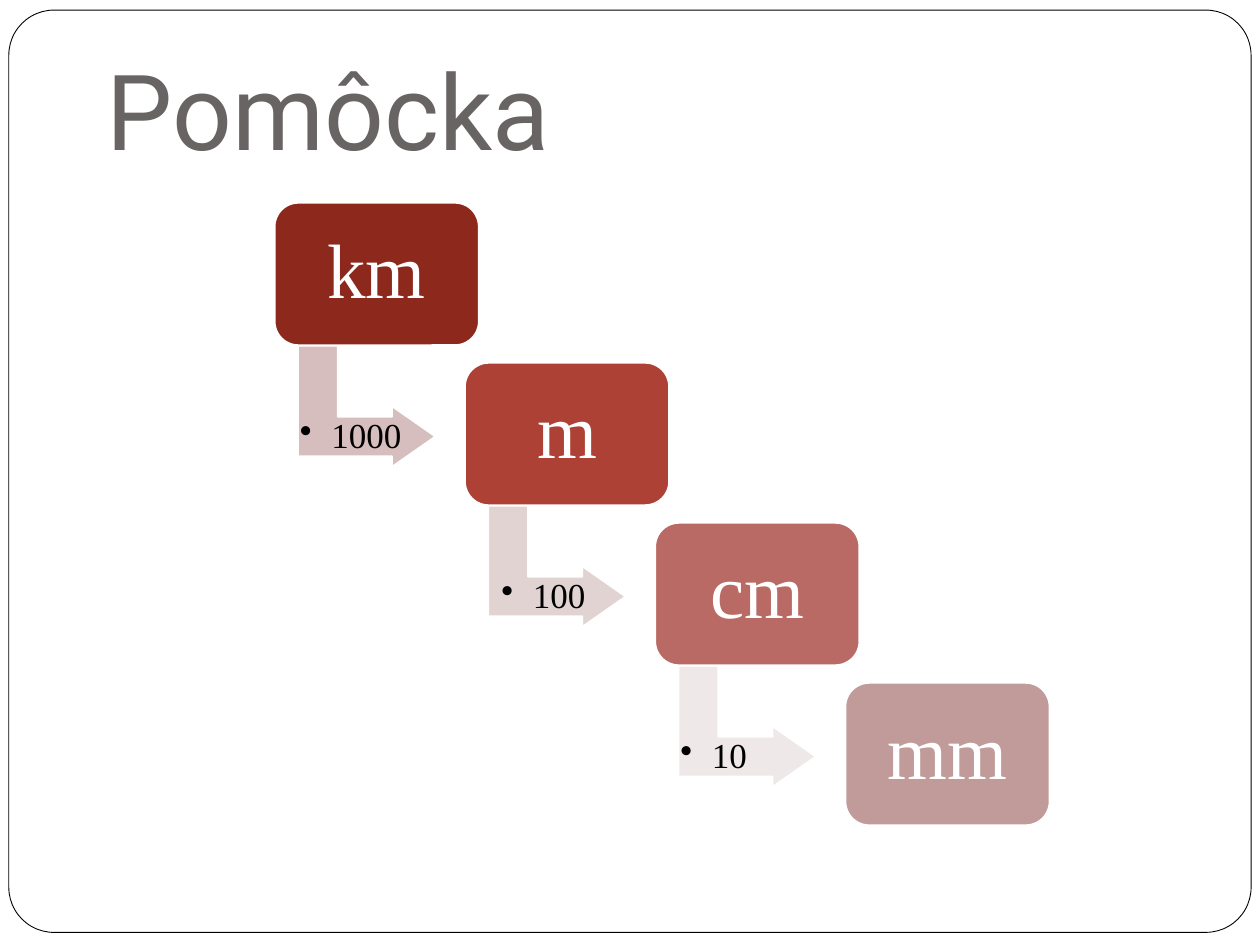
from dataclasses import dataclass

from lxml import etree
from pptx import Presentation
from pptx.dml.color import RGBColor
from pptx.enum import shapes, text
from pptx.oxml.ns import qn
from pptx.util import Inches, Pt


@dataclass(frozen=True)
class Theme:
    paper: str = "FFFFFF"
    ink: str = "000000"
    title: str = "696464"
    title_font: str = "Roboto"
    body_font: str = "Times New Roman"
    title_size: int = 60
    unit_size: int = 44
    factor_size: int = 20


@dataclass(frozen=True)
class Factor:
    """Conversion from one unit to the next, shown on a bent arrow."""
    label: str
    color: str
    indent: float
    width: float


@dataclass(frozen=True)
class Unit:
    name: str
    color: str
    factor: Factor | None = None


THEME = Theme()
UNITS = [
    Unit("km", "8D291C", Factor("1000", "D5BEBD", 0.12, 1.88)),
    Unit("m", "AD4136", Factor("100", "E2D3D3", 0.21, 1.18)),
    Unit("cm", "BA6A65", Factor("10", "EFE8E8", 0.12, 1.18)),
    Unit("mm", "C09B99"),
]
LEFT, TOP = 2.18, 1.61
STEP_X, STEP_Y = 1.51, 1.27
BOX_W, BOX_H = 1.62, 1.13


def add_shape(slide, kind, box, fill: str, line: str, width: float, adjust):
    sp = slide.shapes.add_shape(kind, *map(Inches, box))
    sp.shadow.inherit = False
    sp.fill.solid()
    sp.fill.fore_color.rgb = RGBColor.from_string(fill)
    sp.line.color.rgb = RGBColor.from_string(line)
    sp.line.width = Pt(width)
    for i, value in enumerate(adjust):
        sp.adjustments[i] = value
    return sp


def write(sp, content: str, *, size: int, color: str, font: str, insets,
          anchor=text.MSO_ANCHOR.MIDDLE, align=text.PP_ALIGN.LEFT,
          spacing: float = 0.9, bullet: bool = False) -> None:
    """Insets run left, top, right, bottom."""
    tf = sp.text_frame
    tf.word_wrap = True
    tf.vertical_anchor = anchor
    (tf.margin_left, tf.margin_top,
     tf.margin_right, tf.margin_bottom) = map(Inches, insets)
    p = tf.paragraphs[0]
    p.alignment = align
    p.line_spacing = spacing
    r = p.add_run()
    r.text = content
    r.font.size = Pt(size)
    r.font.name = font
    r.font.color.rgb = RGBColor.from_string(color)
    if bullet:
        pPr = p._p.get_or_add_pPr()
        pPr.set("marL", str(Inches(0.25)))
        pPr.set("indent", str(-Inches(0.25)))
        etree.SubElement(pPr, qn("a:buChar")).set("char", "•")


def add_factor(slide, factor: Factor, x: float, y: float) -> None:
    arrow = add_shape(slide, shapes.MSO_SHAPE.BENT_UP_ARROW,
                      (x + 0.25, y + 1.07, 0.96, 1.09),
                      factor.color, THEME.paper, 1, (0.328, 0.25, 0.358))
    arrow.rotation = 90
    label = slide.shapes.add_textbox(
        *map(Inches, (x + factor.indent, y + 1.36, factor.width, 1)))
    write(label, factor.label, size=THEME.factor_size, color=THEME.ink,
          font=THEME.body_font, insets=[0.08] * 4, bullet=True)


def add_unit(slide, unit: Unit, x: float, y: float) -> None:
    sp = add_shape(slide, shapes.MSO_SHAPE.ROUNDED_RECTANGLE,
                   (x, y, BOX_W, BOX_H), unit.color, THEME.paper, 1, (0.167,))
    write(sp, unit.name, size=THEME.unit_size, color=THEME.paper,
          font=THEME.body_font, insets=[0.18] * 4,
          align=text.PP_ALIGN.CENTER)


def main() -> None:
    prs = Presentation()
    prs.slide_width, prs.slide_height = Inches(10), Inches(7.5)
    slide = prs.slides.add_slide(prs.slide_layouts[6])

    add_shape(slide, shapes.MSO_SHAPE.ROUNDED_RECTANGLE,
              (0.07, 0.08, 9.86, 7.32), THEME.paper, THEME.ink, 0.5, (0.049,))
    title = slide.shapes.add_textbox(*map(Inches, (0.75, 0.21, 8.5, 1.25)))
    write(title, "Pomôcka", size=THEME.title_size, color=THEME.title,
          font=THEME.title_font, insets=(0.1, 0.05, 0.1, 0.1),
          anchor=text.MSO_ANCHOR.BOTTOM, spacing=1.0)

    for i, unit in enumerate(UNITS):
        x, y = LEFT + i * STEP_X, TOP + i * STEP_Y
        if unit.factor:
            add_factor(slide, unit.factor, x, y)
        add_unit(slide, unit, x, y)

    prs.save("out.pptx")


if __name__ == "__main__":
    main()
